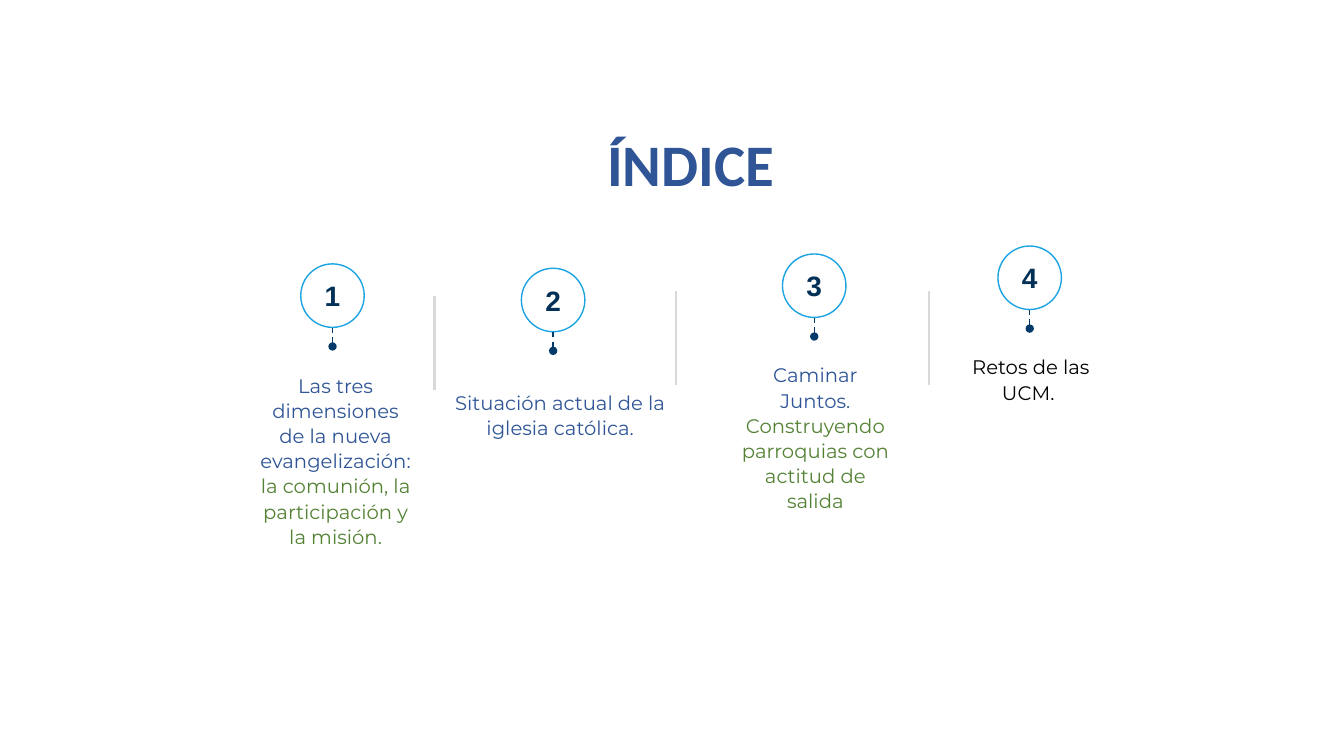
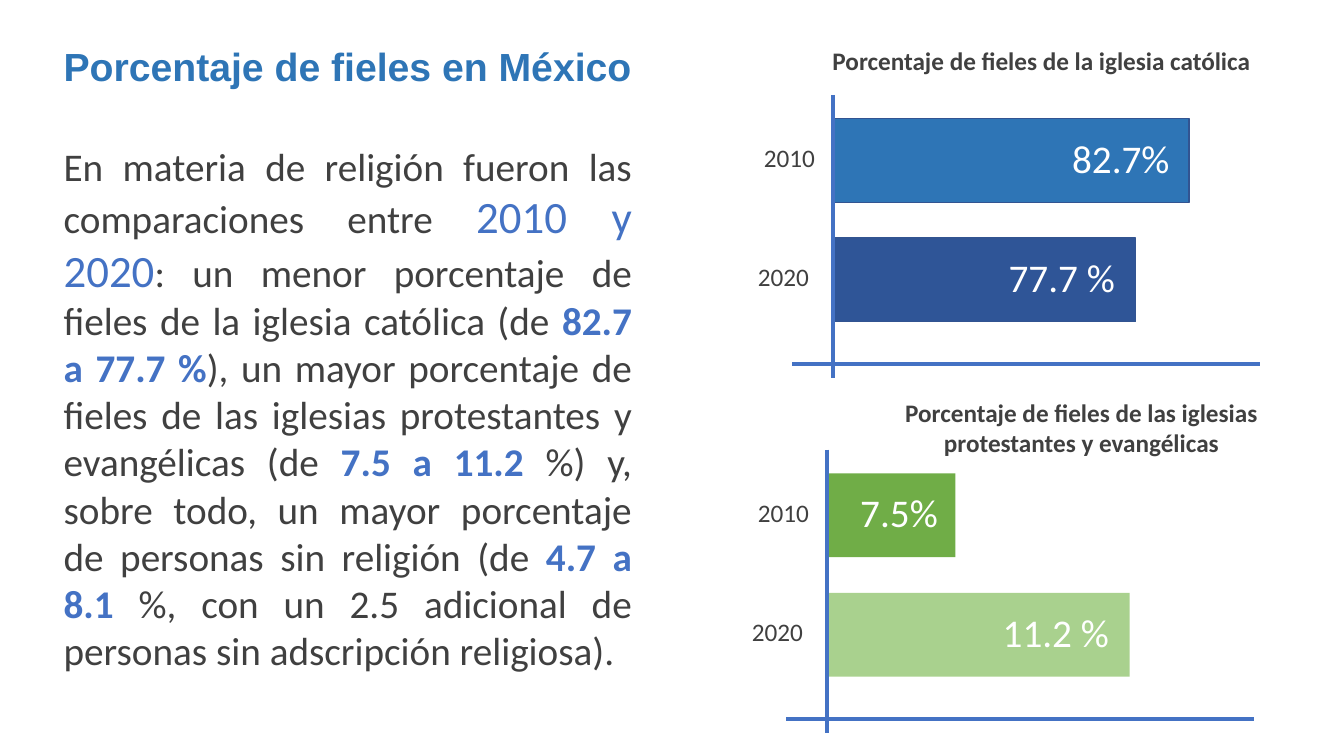
"""Builds the index slide and the slide on the share of believers in Mexico."""
from dataclasses import dataclass
from typing import Optional

from lxml.etree import SubElement
from pptx import Presentation
from pptx.dml.color import RGBColor
from pptx.enum.dml import MSO_LINE
from pptx.enum.shapes import MSO_CONNECTOR, MSO_SHAPE
from pptx.enum.text import MSO_ANCHOR, MSO_AUTO_SIZE, PP_ALIGN
from pptx.oxml.ns import qn
from pptx.util import Cm, Pt

NAVY, SKY, DARK = "2F5597", "1BA3E2", "033A6A"
BLUE, ACCENT, GREEN = "2E75B6", "4472C4", "548235"
GRAY, RULE, WHITE, BLACK = "404040", "D9D9D9", "FFFFFF", "000000"
LEFT, CENTER = PP_ALIGN.LEFT, PP_ALIGN.CENTER


@dataclass
class Run:
    text: str
    size: float
    color: str
    bold: bool = False
    font: str = "Calibri"


@dataclass
class Topic:
    center: float
    top: float
    text_center: float
    text_top: float
    text_width: float
    phrases: list[tuple[str, str]]


@dataclass
class Bar:
    year: str
    value: str
    width: float
    color: str
    value_dx: float


@dataclass
class Panel:
    x: float
    y: float
    title: str
    title_box: tuple[float, float, float, float]
    align: PP_ALIGN
    bars: list[Bar]
    outline: Optional[str] = None


TOPICS = [
    Topic(8.38, 6.65, 8.46, 9.25, 4.42,
          [("Las tres dimensiones de la nueva evangelización: ", NAVY),
           ("la comunión, la participación y la misión.", GREEN)]),
    Topic(13.94, 6.76, 14.12, 9.68, 5.84,
          [("Situación actual de la iglesia católica.", NAVY)]),
    Topic(20.52, 6.4, 20.55, 8.99, 4.32,
          [("Caminar Juntos. ", NAVY),
           ("Construyendo parroquias con actitud de salida", GREEN)]),
    Topic(25.95, 6.2, 25.98, 8.79, 4.32, [("Retos de las UCM. ", BLACK)]),
]
DIVIDERS = [(10.95, 7.47), (17.04, 7.34), (23.42, 7.34)]

PANELS = [
    Panel(21, 2.39, "Porcentaje de fieles de la iglesia católica",
          (20.73, 1.02, 11.79, 1.02), LEFT,
          [Bar("2010", "82.7%", 8.97, BLUE, 5.77),
           Bar("2020", "77.7 %", 7.62, NAVY, 4.17)], "325491"),
    Panel(20.85, 11.33,
          "Porcentaje de fieles de las iglesias protestantes y evangélicas",
          (21.36, 9.88, 11.79, 1.8), CENTER,
          [Bar("2010", "7.5%", 3.23, "70AD47", 0.58),
           Bar("2020", "11.2 %", 7.62, "A9D18E", 4.17)]),
]

BODY = [
    Run("En materia de religión fueron las comparaciones entre ", 28, GRAY),
    Run("2010 y 2020", 32, ACCENT),
    Run(": un menor porcentaje de fieles de la iglesia católica (de ", 28, GRAY),
    Run("82.7 a 77.7 %", 28, ACCENT, True),
    Run("), un mayor porcentaje de fieles de las iglesias protestantes y "
        "evangélicas (de ", 28, GRAY),
    Run("7.5 a 11.2 ", 28, ACCENT, True),
    Run("%) y, sobre todo, un mayor porcentaje de personas sin religión (de ",
        28, GRAY),
    Run("4.7 a 8.1 ", 28, ACCENT, True),
    Run("%, con un 2.5 adicional de personas sin adscripción religiosa).",
        28, GRAY),
]


def rgb(color: str) -> RGBColor:
    return RGBColor.from_string(color)


def write(sp, runs: list[Run], align=LEFT, anchor=MSO_ANCHOR.TOP, spacing=1.0):
    tf = sp.text_frame
    tf.word_wrap = True
    tf.auto_size = MSO_AUTO_SIZE.NONE
    tf.vertical_anchor = anchor
    p = tf.paragraphs[0]
    p.alignment = align
    p.line_spacing = spacing
    p.space_before = Pt(0)
    for run in runs:
        r = p.add_run()
        r.text = run.text
        r.font.name = run.font
        r.font.size = Pt(run.size)
        r.font.bold = run.bold
        r.font.color.rgb = rgb(run.color)
    return p


def place(sp, x: float, y: float, w: float, h: float):
    sp.left, sp.top, sp.width, sp.height = Cm(x), Cm(y), Cm(w), Cm(h)


def add_text(s, box: tuple[float, float, float, float], runs: list[Run],
             align=LEFT, spacing=1.0):
    sp = s.shapes.add_textbox(*map(Cm, box))
    write(sp, runs, align, spacing=spacing)


def add_box(s, kind, x: float, y: float, w: float, h: float,
            fill: Optional[str] = None, line: Optional[str] = None):
    sp = s.shapes.add_shape(kind, Cm(x), Cm(y), Cm(w), Cm(h))
    sp.shadow.inherit = False
    if fill:
        sp.fill.solid()
        sp.fill.fore_color.rgb = rgb(fill)
    else:
        sp.fill.background()
    if line:
        sp.line.color.rgb = rgb(line)
        sp.line.width = Pt(1)
    else:
        sp.line.fill.background()
    return sp


def add_line(s, x1: float, y1: float, x2: float, y2: float,
             color: str, width: float, dotted: bool = False):
    cn = s.shapes.add_connector(MSO_CONNECTOR.STRAIGHT,
                                Cm(x1), Cm(y1), Cm(x2), Cm(y2))
    cn.line.color.rgb = rgb(color)
    cn.line.width = Pt(width)
    spPr = cn._element.spPr
    if dotted:
        cn.line.dash_style = MSO_LINE.DASH
        SubElement(spPr.find(qn("a:ln")), qn("a:headEnd"), type="oval")
    SubElement(spPr, qn("a:effectLst"))


def add_topic(s, number: int, topic: Topic):
    size = 1.6
    sp = add_box(s, MSO_SHAPE.OVAL, topic.center - size / 2, topic.top,
                 size, size, line=SKY)
    tf = sp.text_frame
    tf.margin_left = tf.margin_right = tf.margin_top = tf.margin_bottom = 0
    write(sp, [Run(str(number), 20, "033057", True, "Arial")],
          CENTER, MSO_ANCHOR.MIDDLE)
    add_line(s, topic.center, topic.top + 2.08, topic.center, topic.top + size,
             DARK, 1, dotted=True)
    left = topic.text_center - topic.text_width / 2
    add_text(s, (left, topic.text_top, topic.text_width, 1.5),
             [Run(text, 14, color, font="Montserrat")
              for text, color in topic.phrases], CENTER, 1.07)


def add_panel(s, panel: Panel):
    x, y = panel.x, panel.y
    for i, bar in enumerate(panel.bars):
        top = y + 0.6 + 3.01 * i
        add_box(s, MSO_SHAPE.RECTANGLE, x, top, bar.width, 2.11,
                bar.color, panel.outline)
        add_text(s, (x - 2 - 0.15 * i, top + 0.47, 1.96, 1.02),
                 [Run(bar.year, 18, GRAY)])
        add_text(s, (x + bar.value_dx, top + 0.26, 4, 1.45),
                 [Run(bar.value, 28, WHITE)])
    add_line(s, x, y, x, y + 7.13, ACCENT, 3)
    add_line(s, x + 10.75, y + 6.78, x - 1.04, y + 6.78, ACCENT, 3)
    add_text(s, panel.title_box, [Run(panel.title, 18, GRAY, True)], panel.align)


def build_index(prs):
    s = prs.slides.add_slide(prs.slide_layouts[5])
    place(s.shapes.title, 14.12, 3.25, 5.64, 1.91)
    write(s.shapes.title, [Run("ÍNDICE", 42, NAVY, True)],
          PP_ALIGN.RIGHT, MSO_ANCHOR.BOTTOM, 0.9)
    for x, y in DIVIDERS:
        add_line(s, x, y, x, y + 2.36, RULE, 1.5)
    for number, topic in enumerate(TOPICS, 1):
        add_topic(s, number, topic)


def build_believers(prs):
    s = prs.slides.add_slide(prs.slide_layouts[1])
    place(s.shapes.title, 1.35, 0.94, 25.7, 1.45)
    write(s.shapes.title,
          [Run("Porcentaje de fieles en México", 28, BLUE, True, "Arial")])
    body = s.placeholders[1]
    place(body, 1.35, 3.45, 14.83, 13.77)
    pPr = write(body, BODY, PP_ALIGN.JUSTIFY)._p.get_or_add_pPr()
    pPr.set("marL", "0")
    pPr.set("indent", "0")
    SubElement(pPr, qn("a:buNone"))
    for panel in PANELS:
        add_panel(s, panel)


def main():
    prs = Presentation()
    prs.slide_width, prs.slide_height = Cm(33.87), Cm(19.05)
    build_index(prs)
    build_believers(prs)
    prs.save("out.pptx")


if __name__ == "__main__":
    main()
